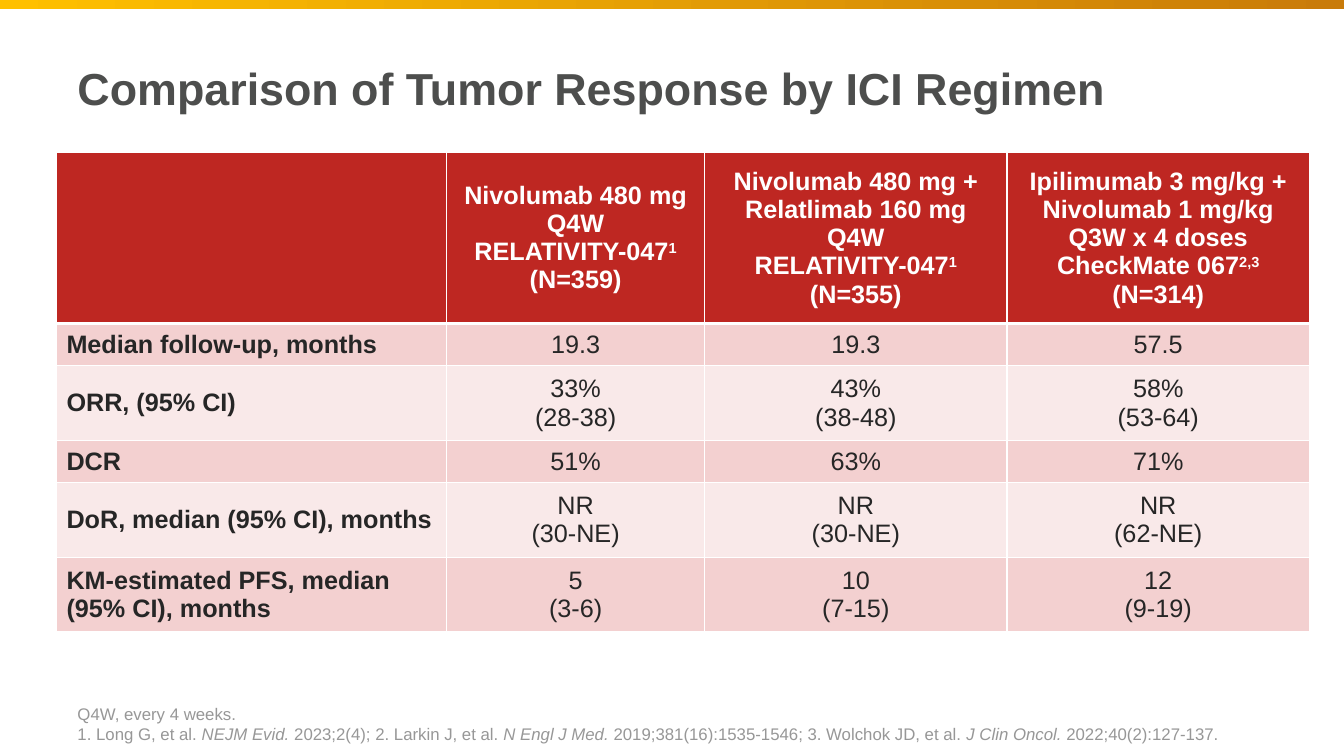
from dataclasses import dataclass

from lxml.etree import SubElement
from pptx import Presentation
from pptx.dml.color import RGBColor
from pptx.enum.shapes import MSO_SHAPE
from pptx.enum.text import MSO_ANCHOR, PP_ALIGN
from pptx.oxml.ns import qn
from pptx.util import Inches, Pt


@dataclass(frozen=True)
class Theme:
    font: str = "Arial"
    title_size: int = 32
    table_size: int = 18
    note_size: int = 12
    title: str = "4D4E4D"
    body: str = "262626"
    note: str = "979797"
    white: str = "FFFFFF"
    header: str = "BE2722"
    bands: tuple = ("F3D0D0", "F9E9E9")
    ribbon: tuple = ("FFC000", "C97B09")
    rule: int = 1
    header_rule: int = 3


class SlideBuilder:
    """Draws styled elements on one slide, with lengths in percent of its size."""

    def __init__(self, deck, theme):
        self.deck = deck
        self.theme = theme
        self.slide = deck.slides.add_slide(deck.slide_layouts[6])

    def across(self, percent):
        return round(self.deck.slide_width * percent / 100)

    def down(self, percent):
        return round(self.deck.slide_height * percent / 100)

    def place(self, left, top, width, height):
        return self.across(left), self.down(top), self.across(width), self.down(height)

    def ribbon(self, *box):
        ribbon = self.slide.shapes.add_shape(MSO_SHAPE.RECTANGLE, *self.place(*box))
        ribbon.shadow.inherit = False
        ribbon.line.fill.background()
        ribbon.fill.gradient()
        ribbon.fill.gradient_angle = 0
        for stop, color in zip(ribbon.fill.gradient_stops, self.theme.ribbon):
            stop.color.rgb = RGBColor.from_string(color)

    def typeset(self, frame, lines, size, color, bold=False, align=PP_ALIGN.LEFT, mark=None):
        for index, line in enumerate(lines):
            paragraph = frame.paragraphs[0] if index == 0 else frame.add_paragraph()
            paragraph.alignment = align
            paragraph.font.name = self.theme.font
            paragraph.font.size = Pt(size)
            paragraph.font.bold = bold
            paragraph.font.color.rgb = RGBColor.from_string(color)
            for position, words in enumerate(line.split("|")):
                run = paragraph.add_run()
                run.text = words
                if position % 2:
                    mark(run)

    def text(self, box, lines, size, color, anchor, bold=False):
        frame = self.slide.shapes.add_textbox(*self.place(*box)).text_frame
        frame.word_wrap = True
        frame.vertical_anchor = anchor
        self.typeset(frame, lines, size, color, bold, mark=italic)

    def border(self, cell, row):
        properties = cell._tc.get_or_add_tcPr()
        heavy_side = {0: "lnB", 1: "lnT"}.get(row)
        for side in ("lnL", "lnR", "lnT", "lnB"):
            width = self.theme.header_rule if side == heavy_side else self.theme.rule
            line = SubElement(properties, qn(f"a:{side}"), w=str(Pt(width)))
            fill = SubElement(line, qn("a:solidFill"))
            SubElement(fill, qn("a:srgbClr"), val=self.theme.white)

    def table(self, left, top, widths, heights, rows):
        theme = self.theme
        box = self.place(left, top, sum(widths), sum(heights))
        table = self.slide.shapes.add_table(len(rows), len(widths), *box).table
        table.horz_banding = False
        for column, width in zip(table.columns, widths):
            column.width = self.across(width)
        for row, height in zip(table.rows, heights):
            row.height = self.down(height)
        for r, entries in enumerate(rows):
            for c, entry in enumerate(entries):
                cell = table.cell(r, c)
                self.border(cell, r)
                cell.fill.solid()
                shade = theme.bands[(r - 1) % 2] if r else theme.header
                cell.fill.fore_color.rgb = RGBColor.from_string(shade)
                cell.vertical_anchor = MSO_ANCHOR.MIDDLE
                if entry:
                    self.typeset(
                        cell.text_frame,
                        entry.split("\n"),
                        theme.table_size,
                        theme.body if r else theme.white,
                        bold=r == 0 or c == 0,
                        align=PP_ALIGN.CENTER if c else PP_ALIGN.LEFT,
                        mark=superscript,
                    )


def italic(run):
    run.font.italic = True


def superscript(run):
    run._r.get_or_add_rPr().set("baseline", "30000")


RESPONSES = [
    (
        "",
        "Nivolumab 480 mg Q4W\nRELATIVITY-047|1\n(N=359)",
        "Nivolumab 480 mg + Relatlimab 160 mg Q4W\nRELATIVITY-047|1\n(N=355)",
        "Ipilimumab 3 mg/kg + Nivolumab 1 mg/kg Q3W x 4 doses\nCheckMate 067|2,3\n(N=314)",
    ),
    ("Median follow-up, months", "19.3", "19.3", "57.5"),
    ("ORR, (95% CI)", "33%\n(28-38)", "43%\n(38-48)", "58%\n(53-64)"),
    ("DCR", "51%", "63%", "71%"),
    ("DoR, median (95% CI), months", "NR\n(30-NE)", "NR\n(30-NE)", "NR\n(62-NE)"),
    ("KM-estimated PFS, median (95% CI), months", "5\n(3-6)", "10\n(7-15)", "12\n(9-19)"),
]

REFERENCES = [
    "Q4W, every 4 weeks.",
    "1. Long G, et al. |NEJM Evid. |2023;2(4); 2. Larkin J, et al. |N Engl J Med. |"
    "2019;381(16):1535-1546; 3. Wolchok JD, et al. |J Clin Oncol. |2022;40(2):127-137.",
]


def main():
    deck = Presentation()
    deck.slide_width, deck.slide_height = Inches(13.33), Inches(7.5)
    theme = Theme()
    builder = SlideBuilder(deck, theme)
    builder.ribbon(0, 0, 100, 1.2)
    builder.text(
        (5.03, 2.93, 88.15, 17.33),
        ["Comparison of Tumor Response by ICI Regimen"],
        theme.title_size,
        theme.title,
        MSO_ANCHOR.MIDDLE,
        bold=True,
    )
    builder.text(
        (5.03, 92.67, 88.15, 6.4), REFERENCES, theme.note_size, theme.note, MSO_ANCHOR.BOTTOM
    )
    single, double = 5.6, 9.87
    builder.table(
        4.2,
        20.13,
        [29.03, 19.2, 22.5, 22.5],
        [22.67, single, double, single, double, double],
        RESPONSES,
    )
    deck.save("out.pptx")


if __name__ == "__main__":
    main()
